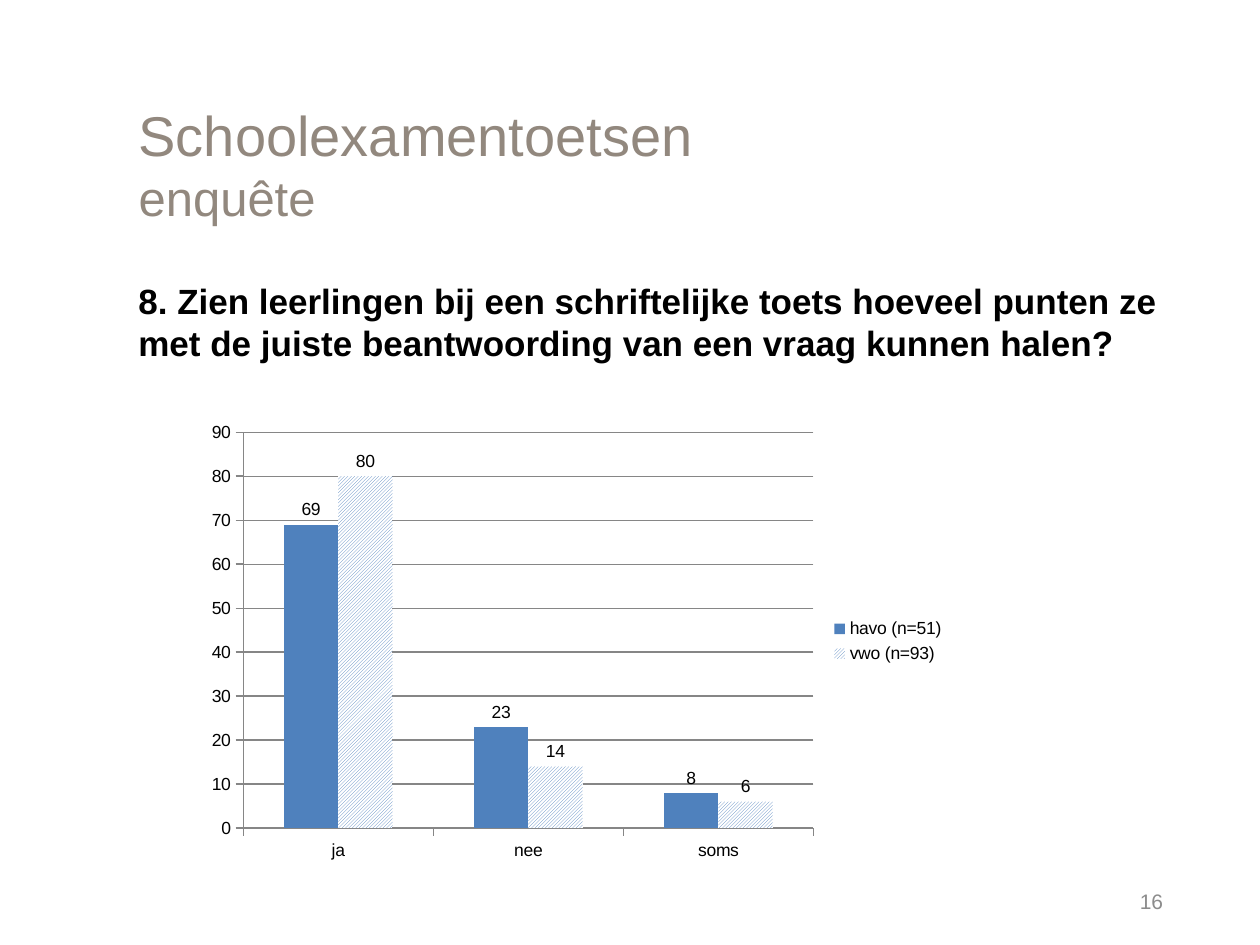
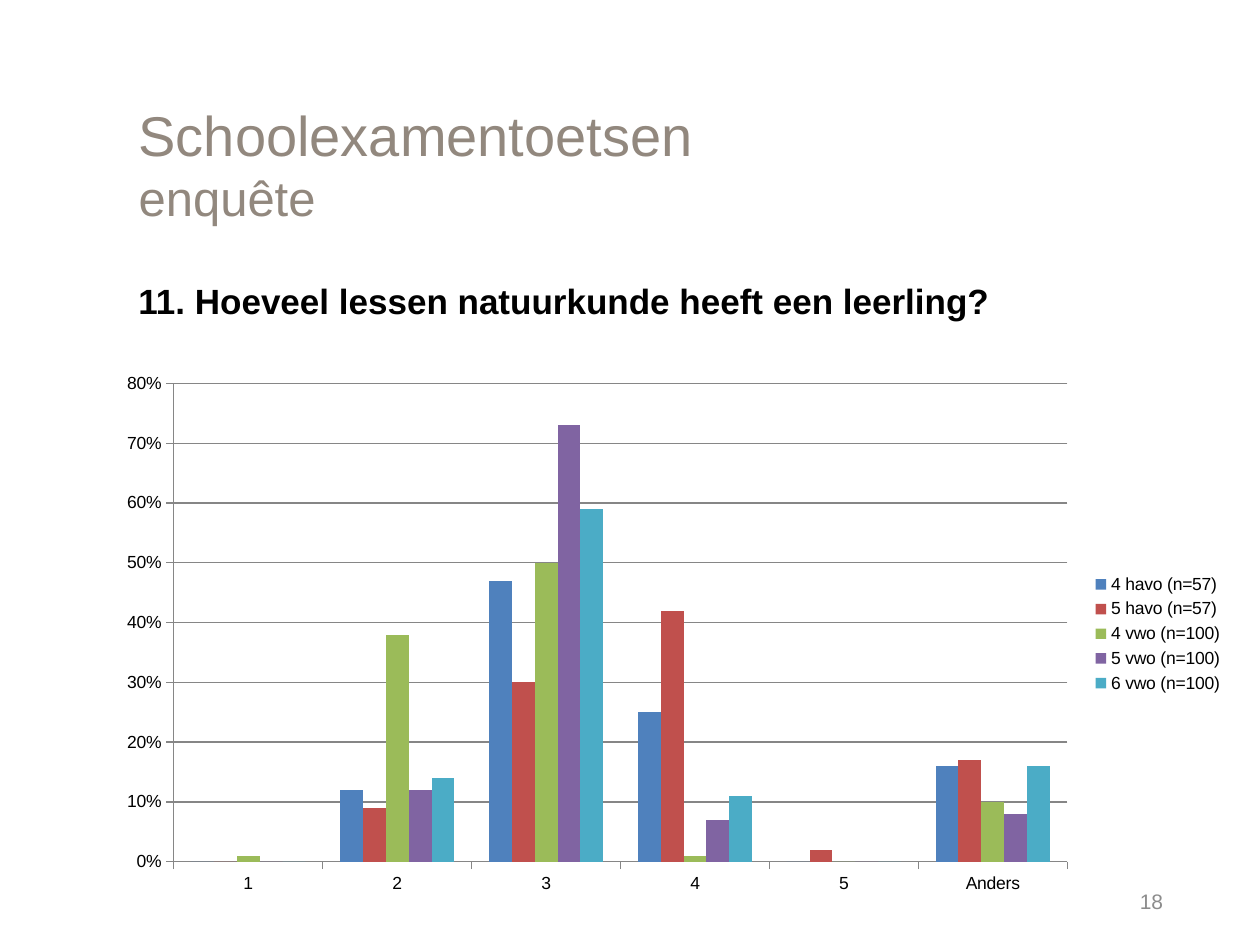
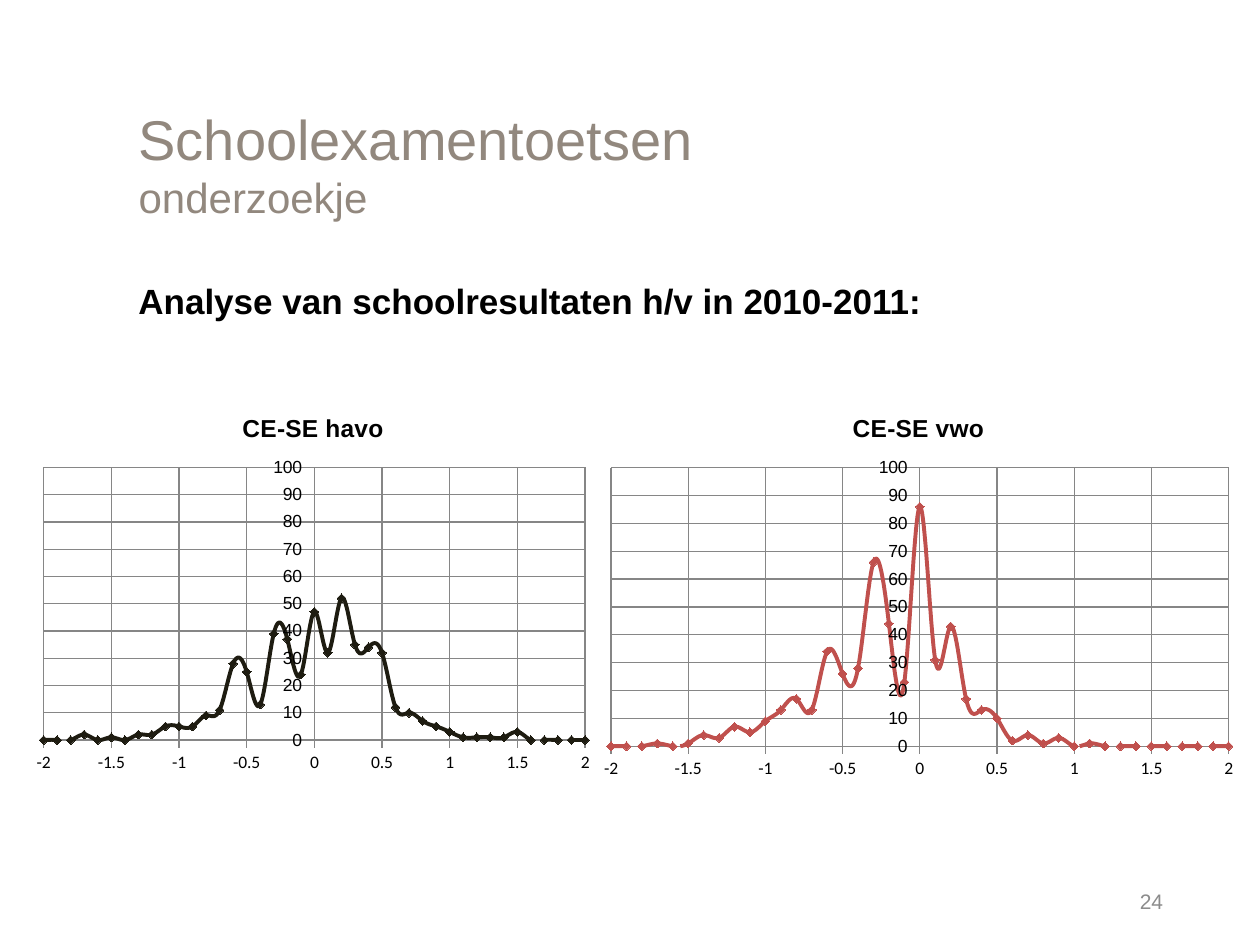
from dataclasses import dataclass
from typing import Optional

from pptx import Presentation
from pptx.chart.data import CategoryChartData as CatData, XyChartData as XyData
from pptx.dml.color import RGBColor as Rgb
from pptx.enum.chart import (XL_CHART_TYPE as Kind, XL_LABEL_POSITION as Spot,
                             XL_LEGEND_POSITION as Side, XL_MARKER_STYLE as Mark,
                             XL_TICK_MARK as Tick)
from pptx.enum.dml import MSO_PATTERN as Hatch
from pptx.enum.text import MSO_ANCHOR as Anchor, MSO_AUTO_SIZE as Fit, PP_ALIGN as Align
from pptx.oxml.ns import qn
from pptx.util import Inches, Pt

FONT = "Arial"
HEX = {"title": "92887E", "text": "000000", "page": "8C8C8C", "grid": "868686",
       "paper": "FFFFFF", "blue": "4F81BD", "red": "C0504D", "green": "9BBB59",
       "purple": "8064A2", "aqua": "4BACC6", "dark": "1E1C11"}
Box = tuple[float, float, float, float]


@dataclass
class Row:
    name: str
    vals: list[float]
    tint: str
    hatch: bool = False


@dataclass
class Bars:
    box: Box
    cats: list[str]
    rows: list[Row]
    fmt: Optional[str] = None
    labels: bool = False


@dataclass
class Curve:
    box: Box
    title: str
    tint: str
    vals: list[int]


@dataclass
class Page:
    num: int
    sub: str
    size: int
    lead: str
    charts: list


PAGES = [
    Page(16, "enquête", 28, "8. Zien leerlingen bij een schriftelijke toets hoeveel punten ze "
         "met de juiste beantwoording van een vraag kunnen halen?",
         [Bars((1.56, 3.28, 6.04, 3.62), ["ja", "nee", "soms"],
               [Row("havo (n=51)", [69, 23, 8], "blue"),
                Row("vwo (n=93)", [80, 14, 6], "blue", True)], labels=True)]),
    Page(18, "enquête", 28, "11. Hoeveel lessen natuurkunde heeft een leerling?",
         [Bars((0.83, 2.88, 8.98, 4.3), ["1", "2", "3", "4", "5", "Anders"],
               [Row("4 havo (n=57)", [0, 0.12, 0.47, 0.25, 0, 0.16], "blue"),
                Row("5 havo (n=57)", [0, 0.09, 0.3, 0.42, 0.02, 0.17], "red"),
                Row("4 vwo (n=100)", [0.01, 0.38, 0.5, 0.01, 0, 0.1], "green"),
                Row("5 vwo (n=100)", [0, 0.12, 0.73, 0.07, 0, 0.08], "purple"),
                Row("6 vwo (n=100)", [0, 0.14, 0.59, 0.11, 0, 0.16], "aqua")], fmt="0%")]),
    Page(24, "onderzoekje", 24, "Analyse van schoolresultaten h/v in 2010-2011:",
         [Curve((0.2, 3.12, 4.57, 3.07), "CE-SE havo", "dark",
                [0, 0, 0, 0, 0, 3, 1, 1, 1, 1, 3, 5, 7, 10, 12, 32, 34, 35, 52, 32, 47,
                 24, 37, 39, 13, 25, 28, 11, 9, 5, 5, 5, 2, 2, 0, 1, 0, 2, 0, 0, 0]),
          Curve((4.69, 3.12, 5.2, 3.12), "CE-SE vwo", "red",
                [0, 0, 0, 0, 0, 0, 0, 0, 0, 1, 0, 3, 1, 4, 2, 10, 13, 17, 43, 31, 86,
                 23, 44, 66, 28, 26, 34, 13, 17, 13, 9, 5, 7, 3, 4, 1, 0, 1, 0, 0, 0])]),
]


def ink(key: str) -> Rgb:
    return Rgb.from_string(HEX[key])


def style(font, size: int, key: str, bold: bool = False) -> None:
    font.name, font.size, font.bold = FONT, Pt(size), bold
    font.color.rgb = ink(key)


def place(shape, box: Box) -> None:
    shape.left, shape.top, shape.width, shape.height = map(Inches, box)


def head(slide, page: Page) -> None:
    shape = slide.shapes.title
    place(shape, (1, 0.67, 8.33, 1.25))
    frame = shape.text_frame
    frame.auto_size, frame.vertical_anchor = Fit.NONE, Anchor.MIDDLE
    para = frame.paragraphs[0]
    para.alignment = Align.LEFT
    style(para.font, 32, "title")
    para.add_run().text = "Schoolexamentoetsen"
    para.add_line_break()
    run = para.add_run()
    run.text, run.font.size = page.sub, Pt(page.size)


def write(slide, box: Box, text: str, size: int, key: str, bold: bool = False,
          align=Align.LEFT, anchor=Anchor.TOP) -> None:
    frame = slide.shapes.add_textbox(*map(Inches, box)).text_frame
    frame.word_wrap, frame.vertical_anchor = True, anchor
    para = frame.paragraphs[0]
    para.text, para.alignment = text, align
    style(para.font, size, key, bold)


def plot(slide, kind, box: Box, data):
    chart = slide.shapes.add_chart(kind, *map(Inches, box), data).chart
    style(chart.font, 10, "text")
    chart.has_title = chart.has_legend = False
    chart.plots[0].vary_by_categories = False
    return chart


def rule(axis, grid: bool) -> None:
    axis.major_tick_mark, axis.minor_tick_mark = Tick.OUTSIDE, Tick.NONE
    axis.has_major_gridlines = grid
    for part in [axis, axis.major_gridlines] if grid else [axis]:
        part.format.line.color.rgb = ink("grid")
        part.format.line.width = Pt(0.75)


def draw_bars(slide, bars: Bars) -> None:
    data = CatData(number_format=bars.fmt or "General")
    data.categories = bars.cats
    for row in bars.rows:
        data.add_series(row.name, row.vals)
    chart = plot(slide, Kind.COLUMN_CLUSTERED, bars.box, data)
    chart.has_legend = True
    chart.legend.position, chart.legend.include_in_layout = Side.RIGHT, False
    rule(chart.category_axis, False)
    rule(chart.value_axis, True)
    if bars.fmt:
        ticks = chart.value_axis.tick_labels
        ticks.number_format, ticks.number_format_is_linked = bars.fmt, False
    group = chart.plots[0]
    group.gap_width, group.overlap = 150, 0
    for row, series in zip(bars.rows, group.series):
        fill = series.format.fill
        if row.hatch:
            fill.patterned()
            fill.pattern = Hatch.LIGHT_UPWARD_DIAGONAL
            fill.back_color.rgb = ink("paper")
        else:
            fill.solid()
        fill.fore_color.rgb = ink(row.tint)
        if bars.labels:
            tags = series.data_labels
            tags.show_value, tags.position = True, Spot.OUTSIDE_END


def draw_curve(slide, curve: Curve) -> None:
    data = XyData()
    points = data.add_series("Series 1")
    for i, val in enumerate(curve.vals):
        points.add_data_point((20 - i) / 10, val)
    chart = plot(slide, Kind.XY_SCATTER_SMOOTH, curve.box, data)
    chart.has_title = True
    para = chart.chart_title.text_frame.paragraphs[0]
    para.text = curve.title
    style(para.font, 14, "text", True)
    for axis, low, high, step in ((chart.category_axis, -2, 2, 0.5),
                                  (chart.value_axis, 0, 100, 10)):
        rule(axis, True)
        axis.minimum_scale, axis.maximum_scale, axis.major_unit = low, high, step
    style(chart.category_axis.tick_labels.font, 10, "text")
    chart.category_axis.tick_labels.font.name = "Calibri"
    series = chart.plots[0].series[0]
    series._element.find(qn("c:smooth")).set("val", "1")
    series.format.line.color.rgb = ink(curve.tint)
    series.format.line.width = Pt(2.25)
    mark = series.marker
    mark.style, mark.size = Mark.DIAMOND, 5
    mark.format.fill.solid()
    mark.format.fill.fore_color.rgb = ink(curve.tint)
    mark.format.line.color.rgb = ink(curve.tint)
    mark.format.line.width = Pt(0.75)


def main() -> None:
    """Build the three slides on school exam tests and save them."""
    deck = Presentation()
    deck.slide_width, deck.slide_height = Inches(10), Inches(7.5)
    for page in PAGES:
        slide = deck.slides.add_slide(deck.slide_layouts[5])
        head(slide, page)
        write(slide, (1, 2.17, 8.33, 4.5), page.lead, 20, "text", True)
        write(slide, (7.5, 6.95, 1.83, 0.4), str(page.num), 12, "page",
              align=Align.RIGHT, anchor=Anchor.MIDDLE)
        for item in page.charts:
            if isinstance(item, Bars):
                draw_bars(slide, item)
            else:
                draw_curve(slide, item)
    deck.save("out.pptx")


if __name__ == "__main__":
    main()
